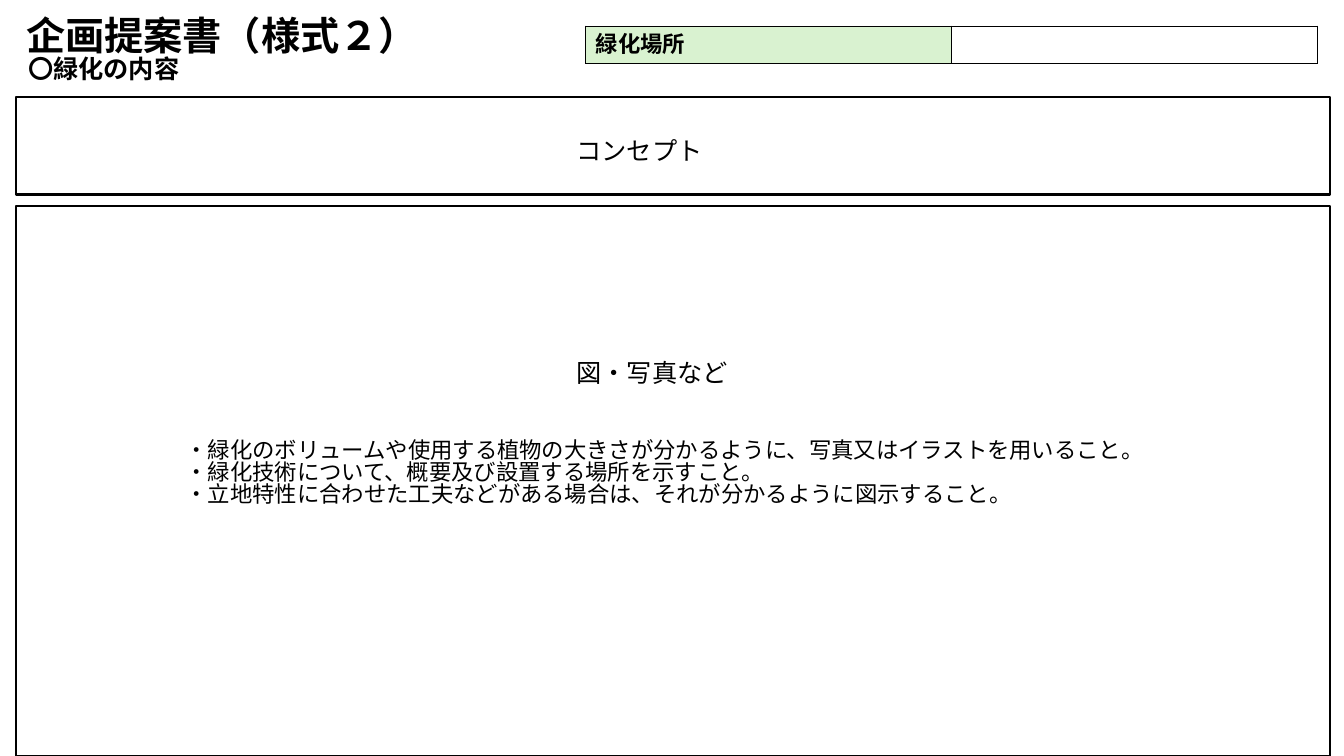
from lxml.etree import SubElement
from pptx import Presentation
from pptx.dml.color import RGBColor
from pptx.enum.shapes import MSO_SHAPE
from pptx.enum.text import MSO_ANCHOR, MSO_AUTO_SIZE, PP_ALIGN
from pptx.oxml.ns import qn
from pptx.util import Inches, Pt

FONT = "Noto Sans CJK JP"
INK, PAPER, GREEN = "000000", "FFFFFF", "D9F2D0"
TITLE = ("企画提案書（様式２）", (0.16, 0.14, 4.13, 0.57))
RULES = ([
    "・緑化のボリュームや使用する植物の大きさが分かるように、写真又はイラストを用いること。",
    "・緑化技術について、概要及び設置する場所を示すこと。",
    "・立地特性に合わせた工夫などがある場合は、それが分かるように図示すること。",
], (1.74, 4.32, 9.85, 0.91))
LABELS = [
    ("コンセプト", (5.62, 1.34, 1.46, 0.4), {}),
    ("図・写真など", (5.62, 3.55, 1.72, 0.4), {}),
    ("〇緑化の内容", (0.18, 0.53, 3.33, 0.4), {"bold": True, "wrap": True}),
]
FRAMES = [(0.16, 2.04, 13.03, 5.46), (0.16, 0.96, 13.03, 0.97)]
SITE = [("緑化場所", GREEN), ("", PAPER)]
SITE_BOX = (5.81, 0.26, 7.26, 0.37)


def color(code):
    return RGBColor.from_string(code)


def place(shape, box):
    shape.left, shape.top, shape.width, shape.height = map(Inches, box)


def write(frame, text, size=18, bold=False):
    lines = [text] if isinstance(text, str) else text
    for i, line in enumerate(lines):
        para = frame.add_paragraph() if i else frame.paragraphs[0]
        para.alignment = PP_ALIGN.LEFT
        para.line_spacing = 0.83
        para.space_before = para.space_after = Pt(0)
        run = para.add_run()
        run.text = line
        font = run.font
        font.size, font.bold, font.name = Pt(size), bold, FONT
        font.color.rgb = color(INK)
        SubElement(run._r.get_or_add_rPr(), qn("a:ea"), typeface=FONT)


def fill_box(shape, text, wrap=False, **style):
    frame = shape.text_frame
    frame.word_wrap = wrap
    frame.auto_size = MSO_AUTO_SIZE.SHAPE_TO_FIT_TEXT
    frame.vertical_anchor = MSO_ANCHOR.TOP
    write(frame, text, **style)


def border(cell):
    props = cell._tc.get_or_add_tcPr()
    for side in ("lnL", "lnR", "lnT", "lnB"):
        line = SubElement(props, qn("a:" + side), w=str(Pt(1)))
        solid = SubElement(line, qn("a:solidFill"))
        SubElement(solid, qn("a:srgbClr"), val=INK)


def main():
    deck = Presentation()
    deck.slide_width, deck.slide_height = Inches(13.33), Inches(7.5)
    slide = deck.slides.add_slide(deck.slide_layouts[1])
    shapes = slide.shapes
    title, body = slide.placeholders

    for box in FRAMES:
        frame = shapes.add_shape(MSO_SHAPE.RECTANGLE, *map(Inches, box))
        frame.shadow.inherit = False
        frame.fill.solid()
        frame.fill.fore_color.rgb = color(PAPER)
        frame.line.color.rgb = color(INK)
        frame.line.width = Pt(1.5)

    for holder, (text, box), style in (
        (body, RULES, {"size": 16}),
        (title, TITLE, {"size": 28, "bold": True}),
    ):
        place(holder, box)
        fill_box(holder, text, **style)
        shapes._spTree.append(holder._element)
    for para in body.text_frame.paragraphs:
        props = para._p.get_or_add_pPr()
        props.set("marL", "0")
        props.set("indent", "0")
        SubElement(props, qn("a:buNone"))

    for text, box, style in LABELS:
        fill_box(shapes.add_textbox(*map(Inches, box)), text, **style)

    table = shapes.add_table(1, len(SITE), *map(Inches, SITE_BOX)).table
    table.first_row = table.horz_banding = False
    for cell, (text, shade) in zip(table.rows[0].cells, SITE):
        border(cell)
        cell.fill.solid()
        cell.fill.fore_color.rgb = color(shade)
        if text:
            write(cell.text_frame, text, size=16, bold=True)
        else:
            cell.margin_top = cell.margin_bottom = 0

    deck.save("out.pptx")


if __name__ == "__main__":
    main()
